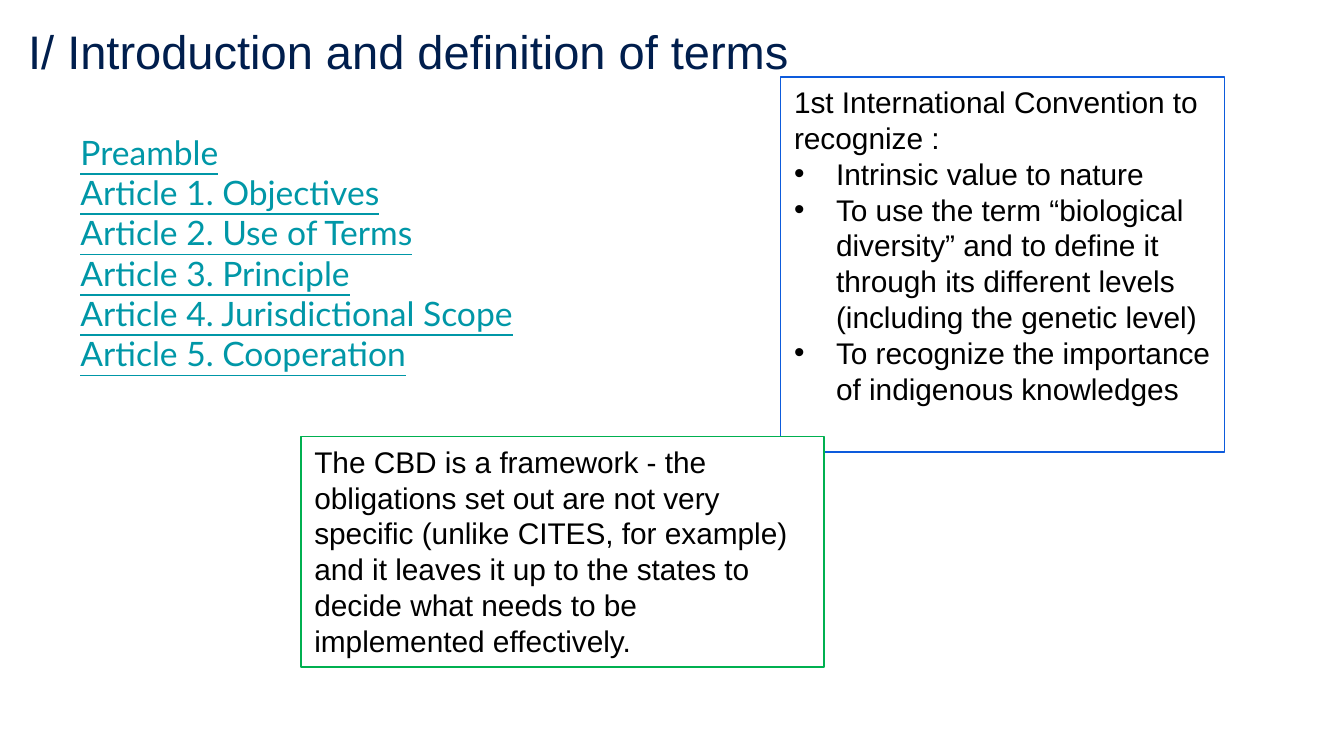
from dataclasses import dataclass
from typing import Optional

from lxml.etree import SubElement
from pptx import Presentation
from pptx.dml.color import RGBColor
from pptx.enum.shapes import MSO_SHAPE
from pptx.enum.text import MSO_ANCHOR, MSO_AUTO_SIZE, PP_ALIGN
from pptx.oxml.ns import qn
from pptx.util import Pt

NAVY = RGBColor(0x00, 0x1E, 0x4D)
BLUE = RGBColor(0x0D, 0x5B, 0xDC)
GREEN = RGBColor(0x00, 0xB0, 0x50)
TEAL = RGBColor(0x00, 0x97, 0xA7)
BLACK = RGBColor(0, 0, 0)
WHITE = RGBColor(0xFF, 0xFF, 0xFF)
BULLET_INDENT = Pt(22.5)


@dataclass
class Area:
    left: float
    top: float
    width: float
    height: float

    def lengths(self) -> tuple:
        return Pt(self.left), Pt(self.top), Pt(self.width), Pt(self.height)


@dataclass
class Note:
    area: Area
    line: RGBColor
    fill: Optional[RGBColor]
    lead: str
    bullets: tuple = ()


NOTES = (
    Note(Area(418.3, 41.3, 237.6, 200.9), BLUE, None,
         "1st International Convention to recognize :",
         ("Intrinsic value to nature",
          "To use the term “biological diversity” and to define it through "
          "its different levels (including the genetic level)",
          "To recognize the importance of indigenous knowledges")),
    Note(Area(161.3, 234, 280.1, 123.4), GREEN, WHITE,
         "The CBD is a framework - the obligations set out are not very "
         "specific (unlike CITES, for example) and it leaves it up to the "
         "states to decide what needs to be implemented effectively."),
)
ARTICLES = (
    "Preamble",
    "Article 1. Objectives",
    "Article 2. Use of Terms",
    "Article 3. Principle",
    "Article 4. Jurisdictional Scope",
    "Article 5. Cooperation",
)


def format_runs(paragraph, font: str, size: float, color: RGBColor,
                underline: Optional[bool] = None) -> None:
    paragraph.alignment = PP_ALIGN.LEFT
    for run in paragraph.runs:
        run.font.name = font
        run.font.size = Pt(size)
        run.font.color.rgb = color
        run.font.underline = underline


def add_bullet(paragraph) -> None:
    properties = paragraph._p.get_or_add_pPr()
    properties.set("marL", str(BULLET_INDENT))
    properties.set("indent", str(-BULLET_INDENT))
    color = SubElement(properties, qn("a:buClr"))
    SubElement(color, qn("a:srgbClr"), val=str(BLACK))
    SubElement(properties, qn("a:buFont"), typeface="Arial")
    SubElement(properties, qn("a:buChar"), char="•")


def draw_note(slide, note: Note) -> None:
    box = slide.shapes.add_shape(MSO_SHAPE.RECTANGLE, *note.area.lengths())
    box.shadow.inherit = False
    if note.fill is None:
        box.fill.background()
    else:
        box.fill.solid()
        box.fill.fore_color.rgb = note.fill
    box.line.color.rgb = note.line
    box.line.width = Pt(0.75)

    frame = box.text_frame
    frame.word_wrap = True
    frame.vertical_anchor = MSO_ANCHOR.TOP
    frame.text = note.lead
    for bullet in note.bullets:
        paragraph = frame.add_paragraph()
        paragraph.text = bullet
        add_bullet(paragraph)
    for paragraph in frame.paragraphs:
        format_runs(paragraph, "Arial", 16, BLACK)


def draw_title(slide, area: Area, heading: str) -> None:
    title = slide.shapes.title
    title.left, title.top, title.width, title.height = area.lengths()
    frame = title.text_frame
    frame.margin_left = frame.margin_right = Pt(7.2)
    frame.margin_top = frame.margin_bottom = Pt(7.2)
    frame.vertical_anchor = MSO_ANCHOR.BOTTOM
    frame.auto_size = MSO_AUTO_SIZE.NONE
    frame.text = heading
    format_runs(frame.paragraphs[0], "Arial", 25.2, NAVY)


def draw_articles(slide, area: Area) -> None:
    contents = slide.shapes.add_textbox(*area.lengths())
    frame = contents.text_frame
    frame.word_wrap = True
    # One paragraph, with a line break between the entries
    frame.paragraphs[0].text = "\v".join(ARTICLES)
    format_runs(frame.paragraphs[0], "Lato", 18, TEAL, underline=True)


def main() -> None:
    presentation = Presentation()
    presentation.slide_width = Pt(720)
    presentation.slide_height = Pt(405)
    slide = presentation.slides.add_slide(presentation.slide_layouts[5])

    # Heading
    draw_title(slide, Area(7.9, 4.3, 671, 45.4),
               "I/ Introduction and definition of terms")

    # List of articles
    draw_articles(slide, Area(36, 67, 296.6, 174.2))

    # Framed remarks, the later one overlapping the earlier
    for note in NOTES:
        draw_note(slide, note)

    presentation.save("out.pptx")


if __name__ == "__main__":
    main()
